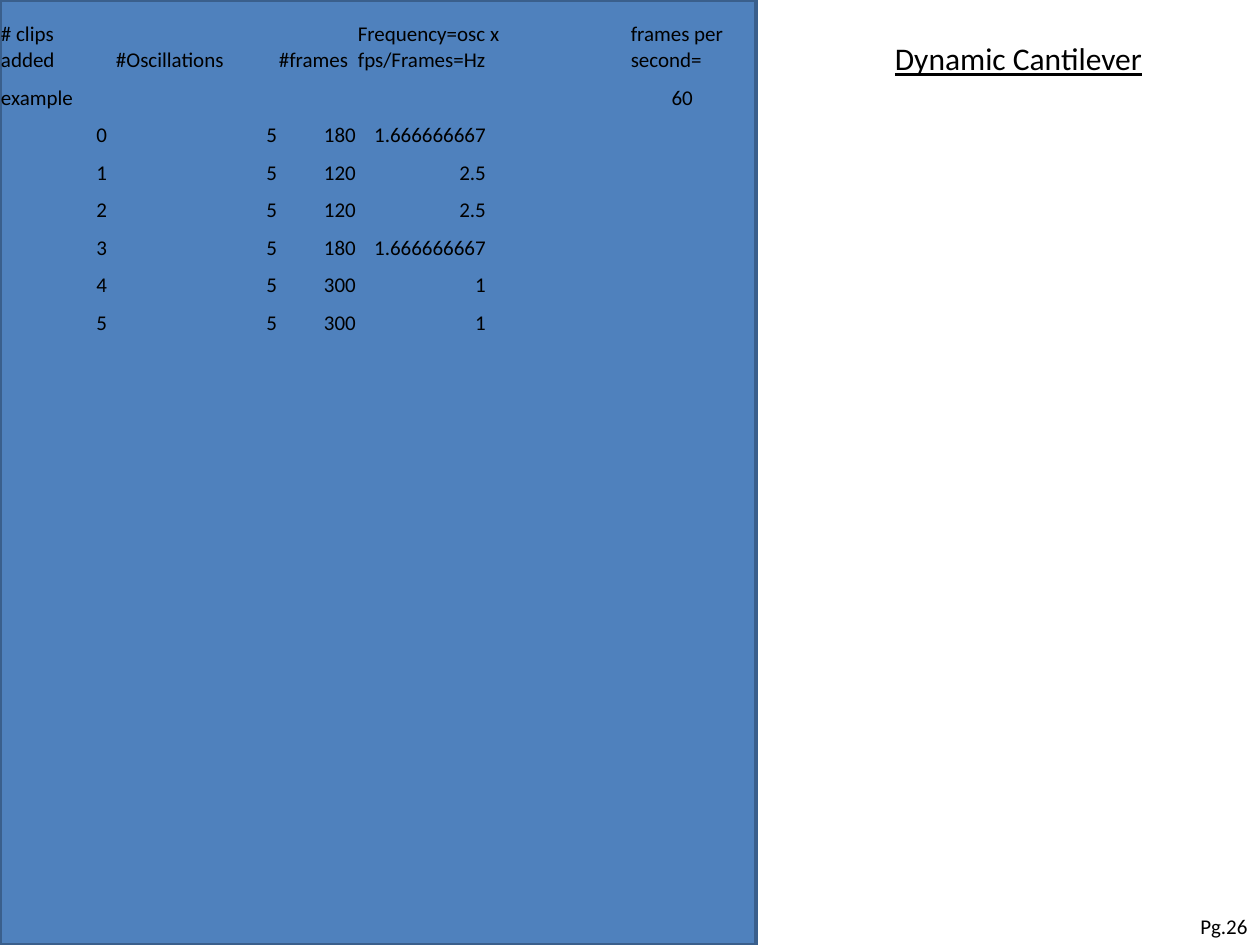
from lxml.etree import SubElement
from pptx import Presentation
from pptx.dml.color import RGBColor
from pptx.enum.shapes import MSO_SHAPE
from pptx.enum.text import MSO_ANCHOR, MSO_AUTO_SIZE, PP_ALIGN
from pptx.oxml.ns import qn
from pptx.util import Emu, Pt

PX_PER_INCH = 126
BLUE = RGBColor(0x4F, 0x81, 0xBD)
DARK_BLUE = RGBColor(0x3A, 0x5F, 0x8C)
BLACK = RGBColor(0, 0, 0)
FONT = "Calibri"
NO_STYLE_NO_GRID = "{2D5ABB26-0587-4C30-8999-92F81FD0307C}"

COL_WIDTHS = [108, 5, 163, 79, 130, 64, 79, 64, 64]
HEADER_HEIGHT = 73
HEADERS = {0: "# clips added", 2: "#Oscillations", 3: "#frames",
           4: "Frequency=osc x fps/Frames=Hz", 7: "frames per second="}
EXAMPLE = {0: "example", 7: "60"}
# Clips added, oscillations, frames, frequency
MEASUREMENTS = [
    ("0", "5", "180", "1.666666667"),
    ("1", "5", "120", "2.5"),
    ("2", "5", "120", "2.5"),
    ("3", "5", "180", "1.666666667"),
    ("4", "5", "300", "1"),
    ("5", "5", "300", "1"),
]
MEASUREMENT_COLS = (0, 2, 3, 4)


def px(n):
    return Emu(n * 914400 // PX_PER_INCH)


def set_attrs(obj, values):
    for name, value in values.items():
        setattr(obj, name, value)


def place(sp, left, top, width, height):
    set_attrs(sp, {"left": px(left), "top": px(top),
                   "width": px(width), "height": px(height)})


def write(tf, text, align, size, underline=None):
    p = tf.paragraphs[0]
    p.alignment = align
    r = p.add_run()
    r.text = text
    set_attrs(r.font, {"name": FONT, "size": Pt(size), "underline": underline})
    r.font.color.rgb = BLACK


def add_panel(slide):
    sp = slide.shapes.add_shape(MSO_SHAPE.RECTANGLE, 0, 0, px(756), px(945))
    sp.shadow.inherit = False
    sp.fill.solid()
    sp.fill.fore_color.rgb = BLUE
    sp.line.color.rgb = DARK_BLUE
    sp.line.width = Pt(2)


def add_page_number(slide):
    sp = slide.shapes.add_textbox(0, 0, 0, 0)
    place(sp, 1144, 907, 116, 38)
    set_attrs(sp.text_frame, {"word_wrap": True,
                              "auto_size": MSO_AUTO_SIZE.SHAPE_TO_FIT_TEXT})
    write(sp.text_frame, "Pg.26", PP_ALIGN.RIGHT, 12)


def format_title(slide):
    sp = slide.shapes.title
    place(sp, 777, 33, 483, 51)
    set_attrs(sp.text_frame, {"word_wrap": True,
                              "vertical_anchor": MSO_ANCHOR.TOP,
                              "auto_size": MSO_AUTO_SIZE.SHAPE_TO_FIT_TEXT})
    write(sp.text_frame, "Dynamic Cantilever", PP_ALIGN.CENTER, 18, True)


def fill_cell(cell, text):
    cell.fill.background()
    set_attrs(cell, {"margin_left": px(1), "margin_right": px(1),
                     "margin_top": px(1), "margin_bottom": 0,
                     "vertical_anchor": MSO_ANCHOR.BOTTOM})
    if text:
        is_number = text[0].isdigit()
        write(cell.text_frame, text,
              PP_ALIGN.RIGHT if is_number else PP_ALIGN.LEFT, 12)
    else:
        # Keep empty cells from stretching the row
        SubElement(cell.text_frame.paragraphs[0]._p, qn("a:endParaRPr"), sz="1200")


def add_frequency_table(slide):
    rows = [HEADERS, EXAMPLE]
    rows += [dict(zip(MEASUREMENT_COLS, values)) for values in MEASUREMENTS]
    # Body rows average 37.5 px
    heights = [HEADER_HEIGHT] + [38 - i % 2 for i in range(len(rows) - 1)]

    frame = slide.shapes.add_table(len(rows), len(COL_WIDTHS), 0, 0,
                                   px(sum(COL_WIDTHS)), px(sum(heights)))
    table = frame.table
    set_attrs(table, {"first_row": False, "horz_banding": False})
    table._tbl.tblPr.find(qn("a:tableStyleId")).text = NO_STYLE_NO_GRID
    for column, width in zip(table.columns, COL_WIDTHS):
        column.width = px(width)
    for i, (row, height) in enumerate(zip(rows, heights)):
        table.rows[i].height = px(height)
        for j in range(len(COL_WIDTHS)):
            fill_cell(table.cell(i, j), row.get(j))
    # Wide headers
    for j in (4, 7):
        table.cell(0, j).merge(table.cell(0, j + 1))


def main():
    prs = Presentation()
    set_attrs(prs, {"slide_width": px(1260), "slide_height": px(945)})
    slide = prs.slides.add_slide(prs.slide_layouts.get_by_name("Title Only"))
    add_panel(slide)
    add_page_number(slide)
    add_frequency_table(slide)
    format_title(slide)
    prs.save("out.pptx")


if __name__ == "__main__":
    main()
